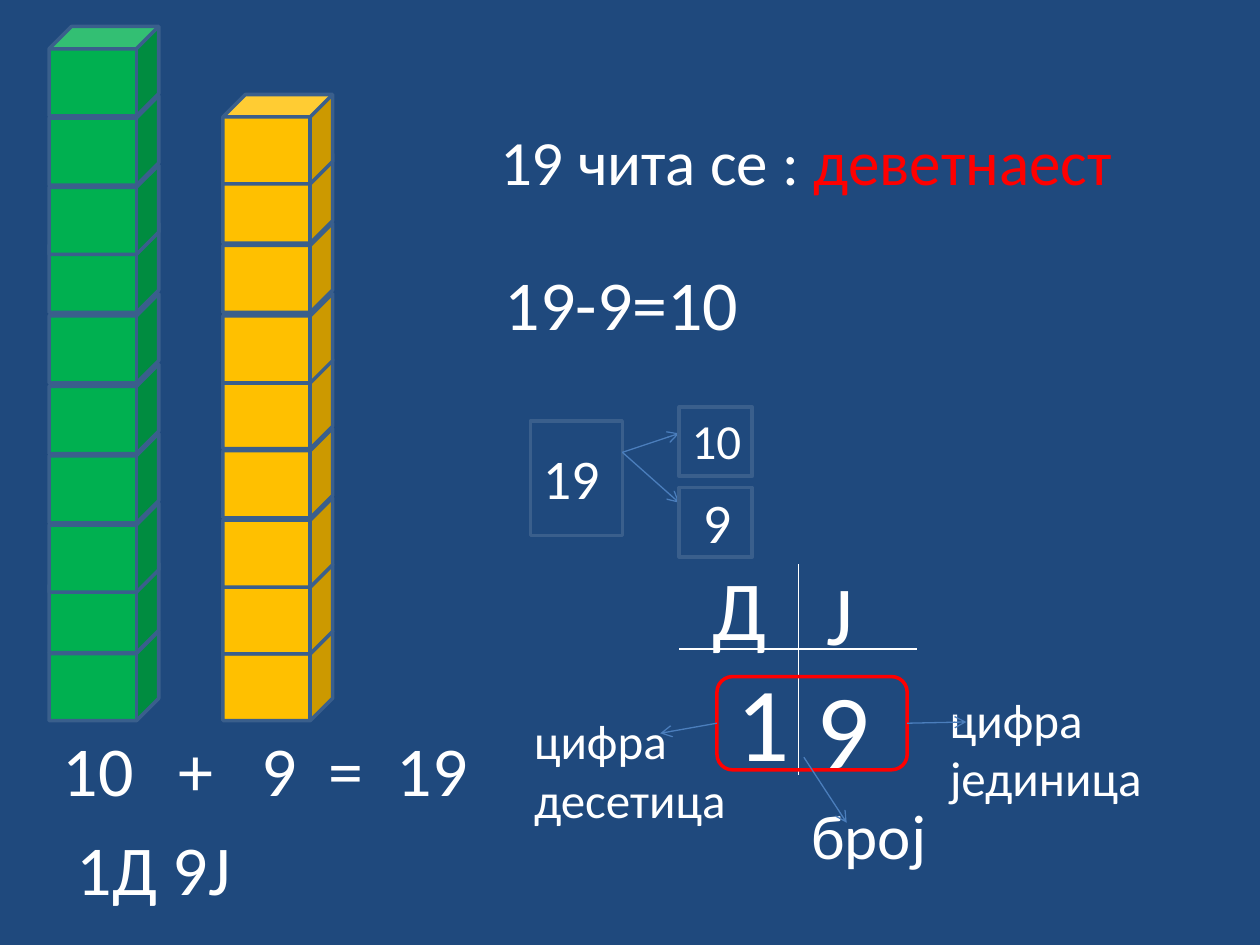
from lxml import etree
from pptx import Presentation
from pptx.dml.color import RGBColor
from pptx.enum.shapes import MSO_CONNECTOR, MSO_SHAPE
from pptx.enum.text import MSO_AUTO_SIZE
from pptx.oxml.ns import qn
from pptx.util import Inches, Pt

CUBE, RECT, ROUND = MSO_SHAPE.CUBE, MSO_SHAPE.RECTANGLE, MSO_SHAPE.ROUNDED_RECTANGLE
STRAIGHT = MSO_CONNECTOR.STRAIGHT
GROW = MSO_AUTO_SIZE.SHAPE_TO_FIT_TEXT
FONT = "Calibri"
COLORS = {
    "back": "1F497D", "white": "FFFFFF", "red": "FF0000", "green": "00B050",
    "gold": "FFC000", "edge": "3A5F8C", "arrow": "4B7EBC",
}


def color(name):
    return RGBColor.from_string(COLORS[name])


def add_text(slide, text, size, x, y, w, h, wrap=True):
    box = slide.shapes.add_textbox(Inches(x), Inches(y), Inches(w), Inches(h))
    frame = box.text_frame
    frame.text = text
    frame.word_wrap = wrap
    frame.auto_size = GROW
    for par in frame.paragraphs:
        for run in par.runs:
            style(run, size)
    return frame


def style(run, size, tint="white"):
    run.font.name = FONT
    run.font.size = Pt(size)
    run.font.color.rgb = color(tint)


def add_box(slide, kind, x, y, w, h, fill=None, edge="edge"):
    shape = slide.shapes.add_shape(kind, Inches(x), Inches(y), Inches(w), Inches(h))
    shape.shadow.inherit = False
    if fill:
        shape.fill.solid()
        shape.fill.fore_color.rgb = color(fill)
    else:
        shape.fill.background()
    shape.line.color.rgb = color(edge)
    shape.line.width = Pt(2)
    return shape


def add_line(slide, x1, y1, x2, y2, tint="white", head=False):
    line = slide.shapes.add_connector(
        STRAIGHT, Inches(x1), Inches(y1), Inches(x2), Inches(y2))
    line.line.color.rgb = color(tint)
    line.line.width = Pt(0.75)
    props = line.line._get_or_add_ln()
    if head:
        etree.SubElement(props, qn("a:tailEnd"), type="arrow")
    etree.SubElement(props.getparent(), qn("a:effectLst"))
    return line


def add_tower(slide, x, base, rises, fill):
    """Stack cubes upward; rises are the heights of their tops over the lowest."""
    for rise in rises:
        add_box(slide, CUBE, x, base - rise, 0.87, 0.71, fill)


def add_sums(slide, x, y):
    total = add_text(slide, "10\t+\t9\t=\t19", 40, x, y, 4.29, 0.77)
    props = total.paragraphs[0]._p.get_or_add_pPr()
    tabs = etree.SubElement(props, qn("a:tabLst"))
    for stop in (0.92, 1.58, 2.11, 2.65):
        etree.SubElement(tabs, qn("a:tab"), pos=str(Inches(stop)), algn="l")
    add_text(slide, "1Д 9Ј", 40, x + 0.11, y + 0.78, 2.13, 0.77)


def add_reading(slide, x, y):
    frame = add_text(slide, "19 чита се : ", 36, x, y, 6.69, 0.71)
    par = frame.paragraphs[0]
    par._p.get_or_add_pPr().set("marL", str(Inches(0.68)))
    word = par.add_run()
    word.text = "деветнаест"
    style(word, 36, "red")
    add_text(slide, "19-9=10", 40, x + 0.72, y + 1.1, 2.07, 0.77, False)


def add_split(slide, x, y):
    """Split 19 into 10 and 9."""
    add_box(slide, RECT, x, y + 0.11, 0.73, 0.91)
    add_text(slide, "19", 32, x, y + 0.24, 1.06, 0.64)
    for end in (0.21, 0.76):
        add_line(slide, x + 0.73, y + 0.36, x + 1.18, y + end, "arrow", True)
    for top in (0, 0.64):
        add_box(slide, RECT, x + 1.18, y + top, 0.58, 0.55)
    add_text(slide, "10", 28, x + 1.18, y - 0.02, 0.6, 0.57, False)
    add_text(slide, "9", 32, x + 1.27, y + 0.59, 0.43, 0.64, False)


def add_places(slide, x, y):
    """Place-value cross with its labelled digits."""
    add_line(slide, x + 1.25, y + 0.78, x + 3.14, y + 0.78)
    add_line(slide, x + 2.2, y + 0.11, x + 2.2, y + 1.78)
    for text, size, dx, dy, w, h, wrap in (
        ("Д", 48, 1.42, 0, 0.63, 0.91, False),
        ("Ј", 48, 2.32, 0.04, 0.75, 0.91, True),
        ("1", 60, 1.61, 0.79, 0.63, 1.11, False),
        ("9", 60, 2.24, 0.85, 0.53, 1.11, True),
        ("број", 36, 2.2, 1.9, 1.12, 0.71, False),
        ("цифра\nјединица", 28, 3.3, 1.05, 1.74, 1.04, False),
        ("цифра\nдесетица", 28, 0, 1.22, 1.74, 1.04, False),
    ):
        add_text(slide, text, size, x + dx, y + dy, w, h, wrap)
    ring = add_box(slide, ROUND, x + 1.55, y + 1, 1.51, 0.74, edge="red")
    tens = add_line(slide, x + 1.55, y + 1.37, x + 1.1, y + 1.45, "arrow", True)
    tens.begin_connect(ring, 1)
    ones = add_line(slide, x + 3.06, y + 1.37, x + 3.53, y + 1.36, "arrow", True)
    ones.begin_connect(ring, 3)
    add_line(slide, x + 2.24, y + 1.64, x + 2.58, y + 2.16, "arrow", True)


def main():
    deck = Presentation()
    deck.slide_width, deck.slide_height = Inches(10), Inches(7.5)
    slide = deck.slides.add_slide(deck.slide_layouts[6])
    slide.background.fill.solid()
    slide.background.fill.fore_color.rgb = color("back")
    add_tower(slide, 0.39, 5.01,
              (0, 0.54, 1.02, 1.57, 2.12, 2.68, 3.24, 3.7, 4.25, 4.8), "green")
    add_tower(slide, 1.77, 5.01,
              (0, 0.53, 1.06, 1.61, 2.16, 2.68, 3.24, 3.79, 4.26), "gold")
    add_sums(slide, 0.4, 5.72)
    add_reading(slide, 3.19, 0.92)
    add_split(slide, 4.21, 3.23)
    add_places(slide, 4.14, 4.37)
    deck.save("out.pptx")


if __name__ == "__main__":
    main()
